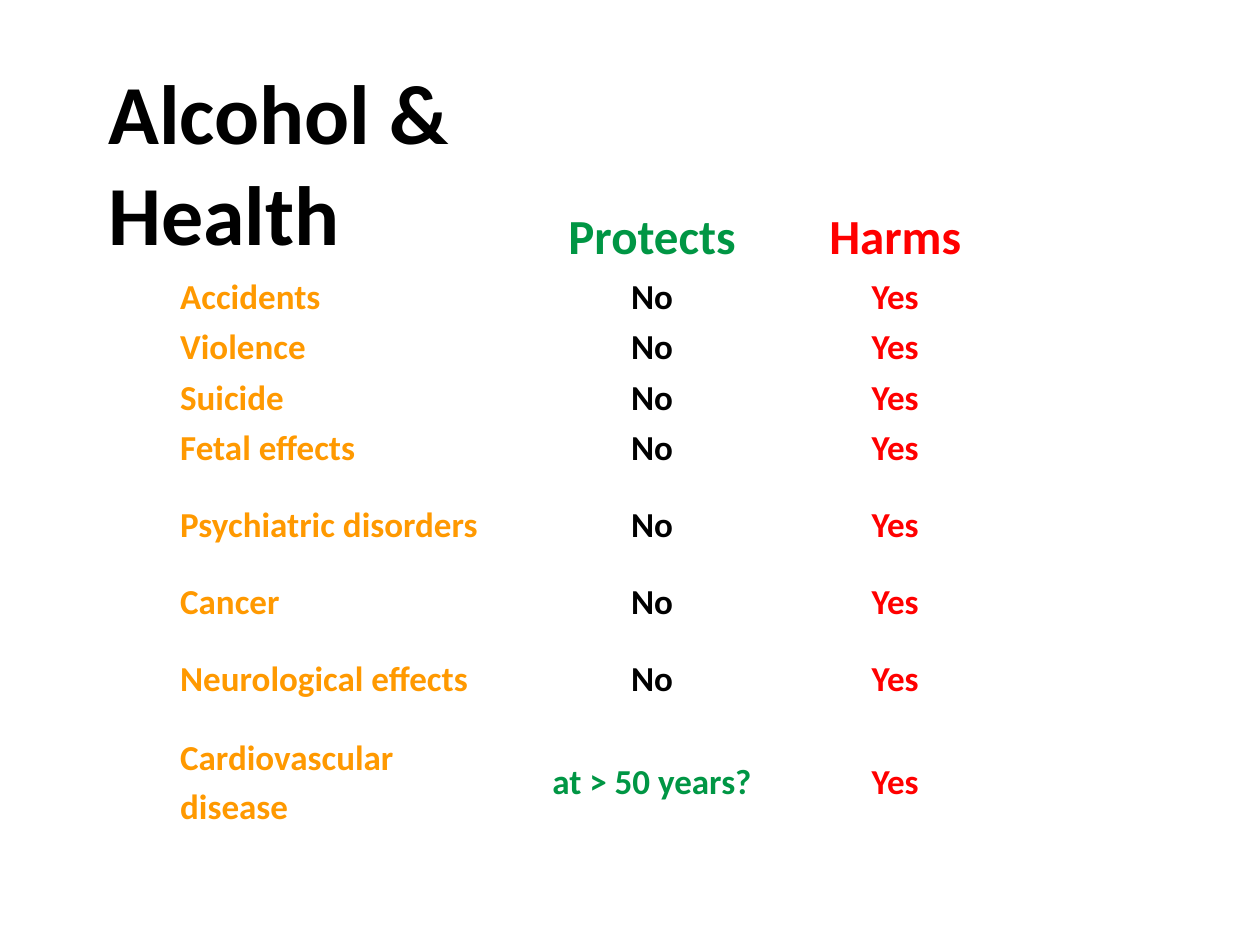
from dataclasses import dataclass

from pptx import Presentation
from pptx.dml.color import RGBColor
from pptx.enum.text import MSO_ANCHOR, MSO_AUTO_SIZE, PP_ALIGN
from pptx.util import Inches, Pt


@dataclass(frozen=True)
class Theme:
    """Colours, font and type sizes of the slide."""
    font: str = "Calibri"
    ink: str = "000000"
    protects: str = "009644"
    harms: str = "FF0000"
    condition: str = "FF9900"
    title_size: int = 48
    header_size: int = 28
    body_size: int = 20


THEME = Theme()
SLIDE_WIDTH, SLIDE_HEIGHT = Inches(10), Inches(7.5)
COLUMN_SHARES = (2.64, 2.27, 1.59)
HEADER_ROW, SINGLE_ROW, TALL_ROW = 0.56, 0.4, 0.82
CONDITIONS = (
    ("Accidents", SINGLE_ROW),
    ("Violence", SINGLE_ROW),
    ("Suicide", SINGLE_ROW),
    ("Fetal effects", SINGLE_ROW),
    ("Psychiatric disorders", TALL_ROW),
    ("Cancer", SINGLE_ROW),
    ("Neurological effects", TALL_ROW),
    ("Cardiovascular disease", TALL_ROW),
)
PROTECTIVE = {"Cardiovascular disease": "at > 50 years?"}


def box(left, top, width, height):
    """Turn shares of the slide's size into lengths."""
    return (round(SLIDE_WIDTH * left), round(SLIDE_HEIGHT * top),
            round(SLIDE_WIDTH * width), round(SLIDE_HEIGHT * height))


def style(paragraph, size, colour):
    """Set the bold slide font on a paragraph."""
    paragraph.font.name = THEME.font
    paragraph.font.size = Pt(size)
    paragraph.font.bold = True
    paragraph.font.color.rgb = RGBColor.from_string(colour)


def add_title(slide, area, wording):
    """Place the heading in its area."""
    frame = slide.shapes.add_textbox(*area).text_frame
    frame.word_wrap = False
    frame.auto_size = MSO_AUTO_SIZE.SHAPE_TO_FIT_TEXT
    frame.margin_left = frame.margin_right = Inches(0.06)
    frame.margin_top = frame.margin_bottom = Inches(0.03)
    frame.text = wording
    style(frame.paragraphs[0], THEME.title_size, THEME.ink)


def fill_cell(cell, wording, size, colour, align):
    """Write one entry of the effects table."""
    cell.vertical_anchor = MSO_ANCHOR.MIDDLE
    cell.margin_left = cell.margin_right = Inches(0.03)
    cell.margin_top = cell.margin_bottom = 0
    cell.text = wording
    paragraph = cell.text_frame.paragraphs[0]
    paragraph.alignment = align
    paragraph.line_spacing = 1.15
    style(paragraph, size, colour)


def effect_rows():
    """List the wording and colour of every row, header first."""
    yield (("", THEME.ink), ("Protects", THEME.protects), ("Harms", THEME.harms))
    for condition, _ in CONDITIONS:
        colour = THEME.protects if condition in PROTECTIVE else THEME.ink
        yield ((condition, THEME.condition),
               (PROTECTIVE.get(condition, "No"), colour),
               ("Yes", THEME.harms))


def add_effects(slide, area, rows):
    """Place the table of conditions in its area."""
    heights = (HEADER_ROW, *(height for _, height in CONDITIONS))
    table = slide.shapes.add_table(len(rows), len(COLUMN_SHARES), *area).table
    table.first_row = table.horz_banding = False
    for column, share in zip(table.columns, COLUMN_SHARES):
        column.width = round(area[2] * share / sum(COLUMN_SHARES))
    for row, share in zip(table.rows, heights):
        row.height = round(area[3] * share / sum(heights))
    for row_index, entries in enumerate(rows):
        size = THEME.body_size if row_index else THEME.header_size
        for column_index, (wording, colour) in enumerate(entries):
            cell = table.cell(row_index, column_index)
            cell.fill.background()
            align = PP_ALIGN.CENTER if column_index else PP_ALIGN.LEFT
            if wording:
                fill_cell(cell, wording, size, colour, align)


def main():
    """Build and save the slide."""
    deck = Presentation()
    deck.slide_width, deck.slide_height = SLIDE_WIDTH, SLIDE_HEIGHT
    slide = deck.slides.add_slide(deck.slide_layouts[6])
    add_effects(slide, box(0.14, 0.21, 0.65, 0.67), list(effect_rows()))
    add_title(slide, box(0.08, 0.06, 0.48, 0.11), "Alcohol & Health")
    deck.save("out.pptx")


if __name__ == "__main__":
    main()
